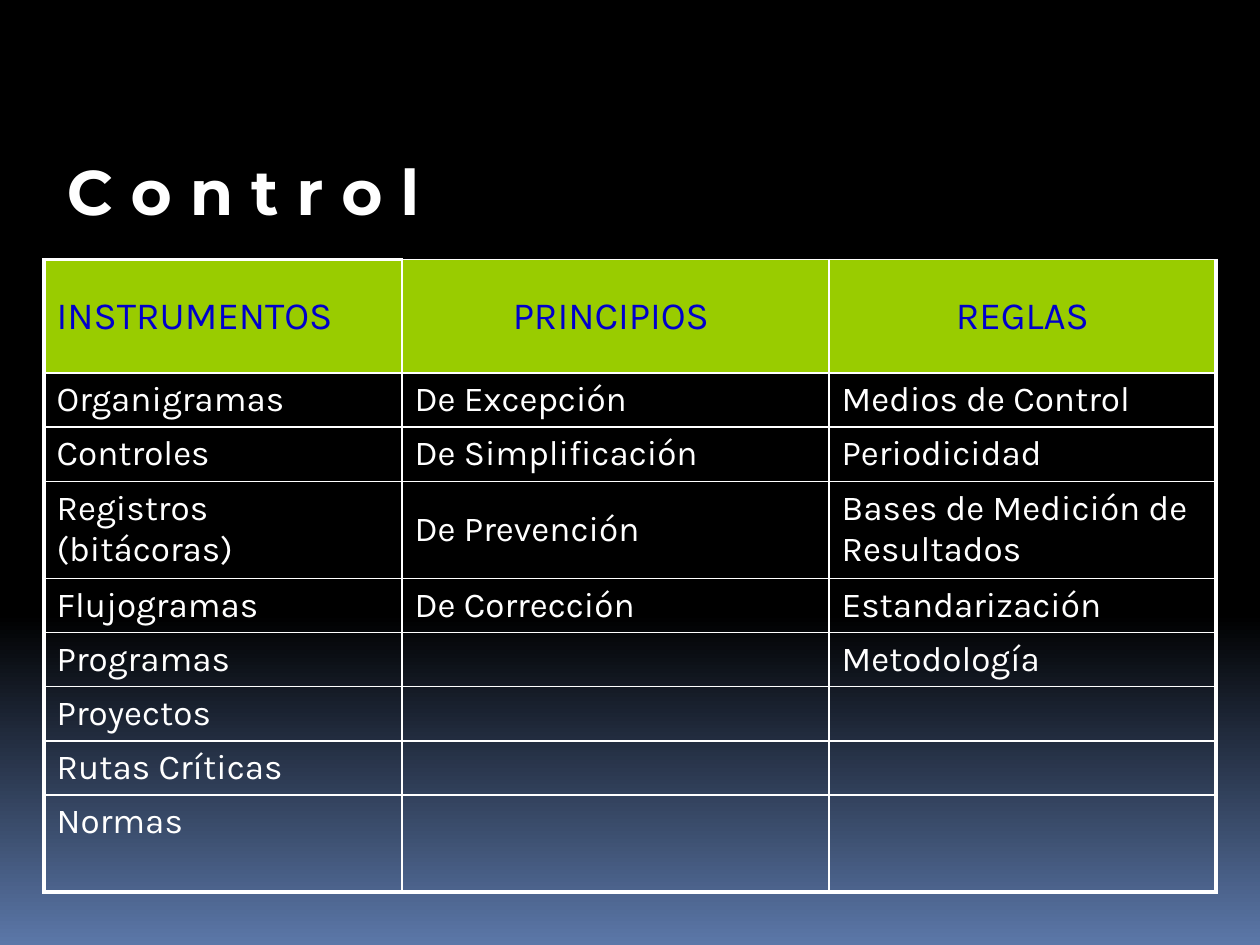
from lxml import etree
from pptx import Presentation
from pptx import util as u
from pptx.dml.color import RGBColor
from pptx.enum import text as t
from pptx.oxml.ns import qn

BLACK = RGBColor(0x00, 0x00, 0x00)
STEEL = RGBColor(0x5B, 0x77, 0xA8)
WHITE = RGBColor(0xFF, 0xFF, 0xFF)
LIME = RGBColor(0x99, 0xCC, 0x00)
BLUE = RGBColor(0x00, 0x00, 0xCC)

THIN, THICK = 1, 2.25
ROW, TALL = 0.43, 0.77
COLS = [2.84, 3.39, 3.07]
ROWS = [0.9, ROW, ROW, TALL, ROW, ROW, ROW, ROW, TALL]
DATA = [
    ["INSTRUMENTOS", "PRINCIPIOS ", "REGLAS"],
    ["Organigramas", "De Excepción", "Medios de Control"],
    ["Controles", "De Simplificación", "Periodicidad"],
    ["Registros (bitácoras)", "De Prevención", "Bases de Medición de Resultados"],
    ["Flujogramas", "De Corrección", "Estandarización"],
    ["Programas", "", "Metodología"],
    ["Proyectos", "", ""],
    ["Rutas Críticas", "", ""],
    ["Normas", "", ""],
]


def write(frame, words, size=20, font="Karla", color=WHITE, bold=False,
          align=t.PP_ALIGN.LEFT):
    para = frame.paragraphs[0]
    para.alignment = align
    if words:
        run = para.add_run()
        run.text = words
        run.font.size = u.Pt(size)
        run.font.name = font
        run.font.bold = bold
        run.font.color.rgb = color


def edge(cell, side, width):
    """Draw one border of a cell; side is L, R, T or B."""
    line = etree.SubElement(cell._tc.get_or_add_tcPr(), qn("a:ln" + side),
                            w=str(u.Pt(width)))
    fill = etree.SubElement(line, qn("a:solidFill"))
    etree.SubElement(fill, qn("a:srgbClr"), val=str(WHITE))


def paint(slide):
    """Fade the background from black to steel blue at the foot."""
    fill = slide.background.fill
    fill.gradient()
    fill.gradient_angle = 270
    for stop, spot, color in zip(fill.gradient_stops, (0.65, 1), (BLACK, STEEL)):
        stop.position = spot
        stop.color.rgb = color


def head(slide, box):
    title = slide.shapes.title
    title.left, title.top, title.width, title.height = map(u.Inches, box)
    frame = title.text_frame
    frame.word_wrap = True
    frame.auto_size = t.MSO_AUTO_SIZE.NONE
    frame.vertical_anchor = t.MSO_ANCHOR.MIDDLE
    write(frame, "C o n t r o l", size=36, font="Montserrat", bold=True)


def grid(slide, left, top):
    box = map(u.Inches, (left, top, sum(COLS), sum(ROWS)))
    table = slide.shapes.add_table(len(ROWS), len(COLS), *box).table
    table.first_row = table.horz_banding = False
    for col, width in zip(table.columns, COLS):
        col.width = u.Inches(width)
    for row, height in zip(table.rows, ROWS):
        row.height = u.Inches(height)

    end, foot = len(COLS) - 1, len(ROWS) - 1
    for r, line in enumerate(DATA):
        for c, words in enumerate(line):
            cell = table.cell(r, c)
            outer = {"L": c == 0, "R": c == end, "T": r == c == 0, "B": r == foot}
            for side, thick in outer.items():
                edge(cell, side, THICK if thick else THIN)
            cell.vertical_anchor = t.MSO_ANCHOR.TOP if r == foot else t.MSO_ANCHOR.MIDDLE
            if r == 0:
                cell.fill.solid()
                cell.fill.fore_color.rgb = LIME
                align = t.PP_ALIGN.CENTER if c else t.PP_ALIGN.LEFT
                write(cell.text_frame, words, size=22, color=BLUE, align=align)
            else:
                cell.fill.background()
                write(cell.text_frame, words)


def main():
    deck = Presentation()
    deck.slide_width, deck.slide_height = u.Inches(10), u.Inches(7.5)
    slide = deck.slides.add_slide(deck.slide_layouts[5])
    paint(slide)
    head(slide, (0.43, 1.16, 7.75, 0.7))
    grid(slide, 0.35, 2.06)
    deck.save("out.pptx")


if __name__ == "__main__":
    main()
